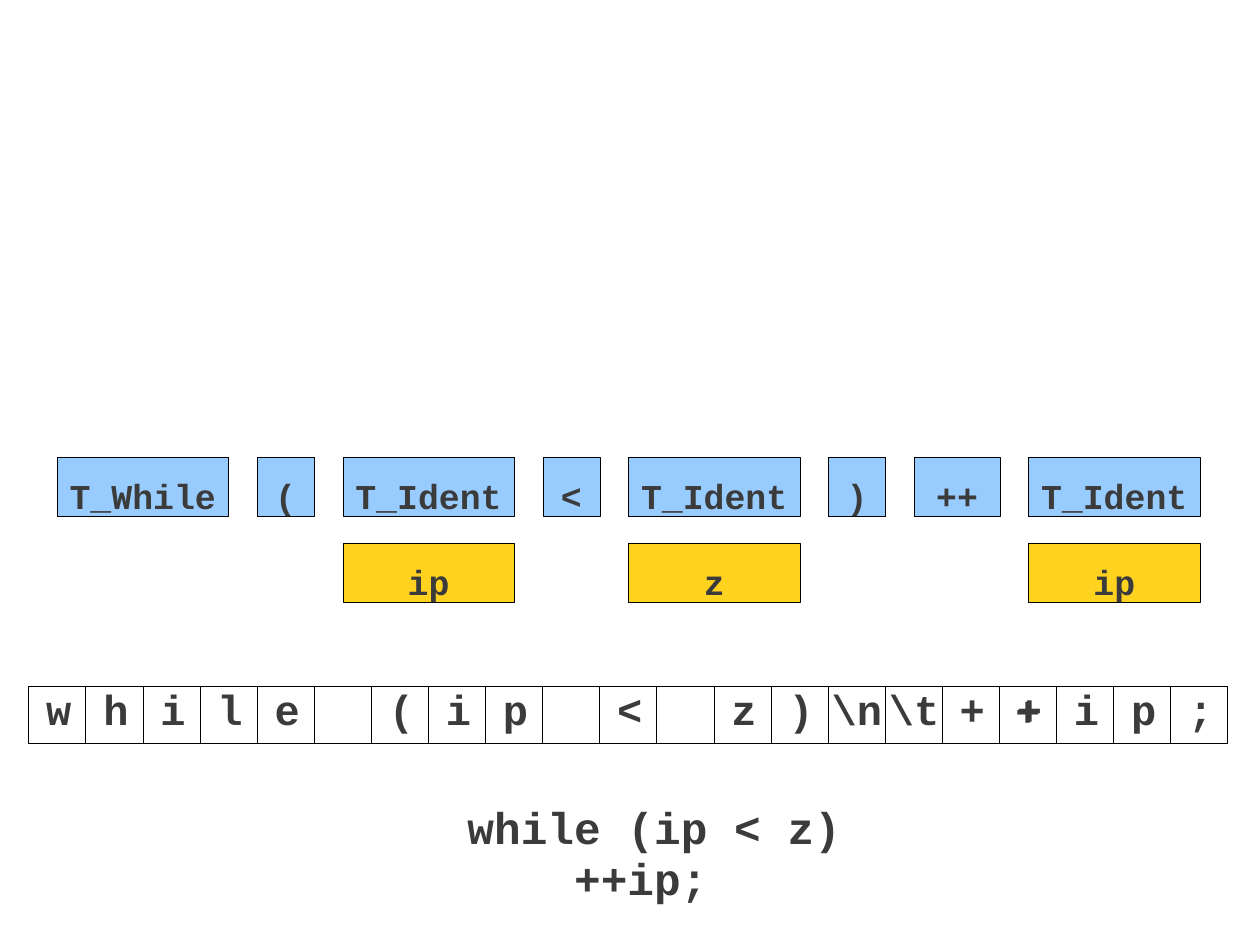
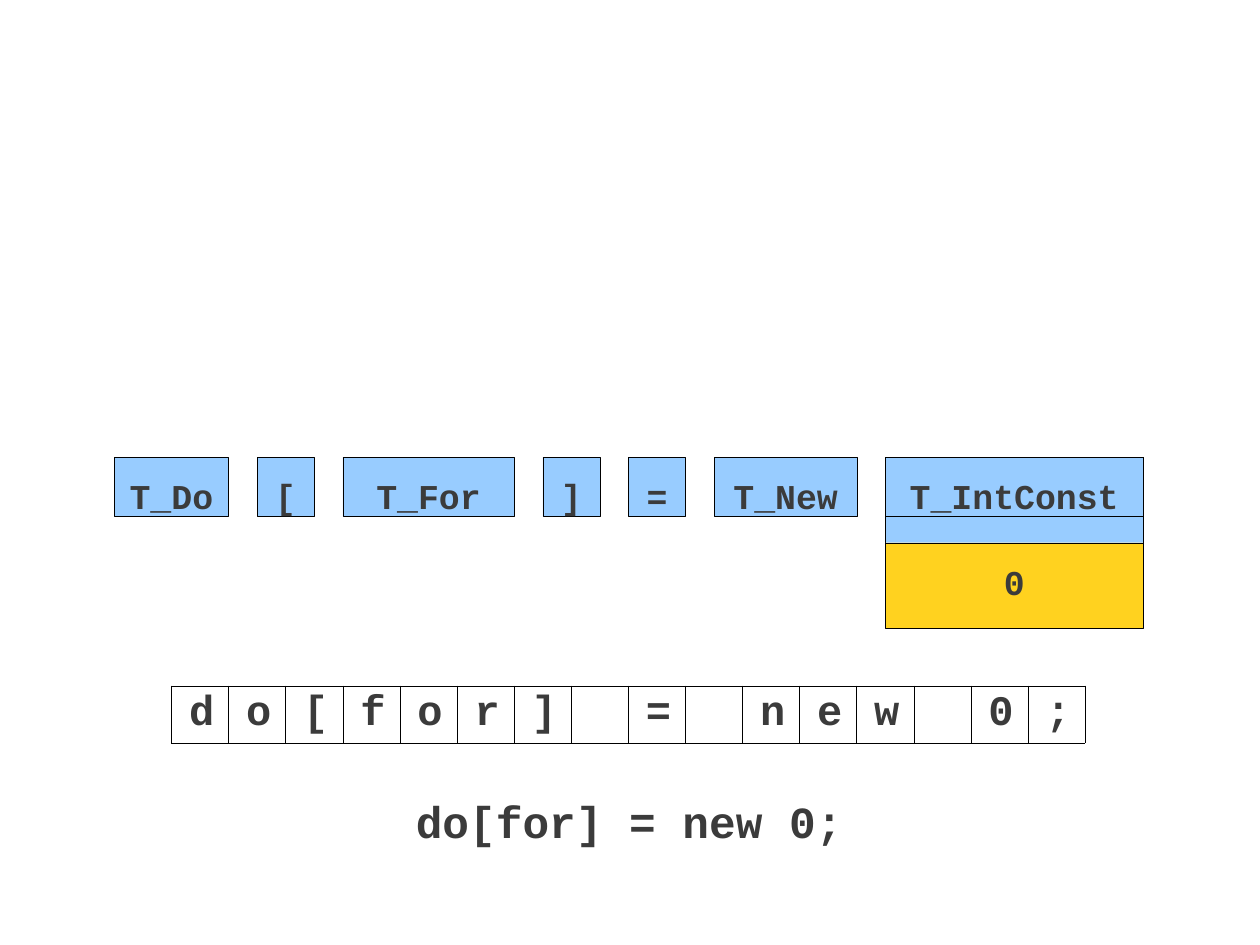
from lxml.etree import SubElement
from pptx import Presentation
from pptx.dml.color import RGBColor
from pptx.enum.shapes import MSO_SHAPE
from pptx.enum.text import MSO_ANCHOR, PP_ALIGN
from pptx.oxml.ns import qn
from pptx.util import Inches, Pt

INK, BLACK, BLUE, YELLOW = "3B3B3B", "000000", "98CCFF", "FFD21F"
LINE_W = Pt(0.25)

prs = Presentation()
prs.slide_width, prs.slide_height = Inches(10), Inches(7.5)

# Grid: a character cell is two units wide and two units high.
U = prs.slide_width / 44.1
TOKEN_ROW, VALUE_ROW, CHAR_ROW = 16, 19, 24
BOX_H = 2.08
CODE_SIZE = 25.4
CHAR_W = Pt(CODE_SIZE * 0.6)

SLIDES = [
    dict(
        tokens_col=2,
        tokens=[("T_While", 6, ""), ("(", 2, ""), ("T_Ident", 6, "ip"),
                ("<", 2, ""), ("T_Ident", 6, "z"), (")", 2, ""),
                ("++", 3, ""), ("T_Ident", 6, "ip")],
        value_h=BOX_H,
        chars_col=1,
        chars=[*"while (ip < z)", r"\n", r"\t", *"++ip;"],
        code_left=3.7,
        code=[("while (ip < z)", 0, 6.4), ("++ip;", 4, 6.8)],
    ),
    dict(
        tokens_col=4,
        tokens=[("T_Do", 4, ""), ("[", 2, ""), ("T_For", 6, ""), ("]", 2, ""),
                ("=", 2, ""), ("T_New", 5, ""), ("T_IntConst", 9, "0")],
        value_h=3,
        chars_col=6,
        chars=[*"do[for] = new 0;"],
        code_left=3.29,
        code=[("do[for] = new 0;", 0, 6.35)],
    ),
]


def write(tf, text, size, align=PP_ALIGN.LEFT, spacing=None, before=None,
          left=0, top=0):
    tf.margin_left, tf.margin_top = Inches(left), Inches(top)
    tf.margin_right = tf.margin_bottom = 0
    p = tf.paragraphs[0]
    p.alignment = align
    if spacing:
        p.line_spacing = Pt(spacing)
    if before:
        p.space_before = Pt(before)
    r = p.add_run()
    r.text = text
    r.font.name, r.font.size, r.font.bold = "Courier New", Pt(size), True
    r.font.color.rgb = RGBColor.from_string(INK)


def add_box(s, col, row, w, h, fill, text=""):
    sp = s.shapes.add_shape(MSO_SHAPE.RECTANGLE, *(round(n * U) for n in (col, row, w, h)))
    sp.shadow.inherit = False
    sp.fill.solid()
    sp.fill.fore_color.rgb = RGBColor.from_string(fill)
    sp.line.color.rgb = RGBColor.from_string(BLACK)
    sp.line.width = LINE_W
    if text:
        tf = sp.text_frame
        tf.word_wrap, tf.vertical_anchor = True, MSO_ANCHOR.TOP
        write(tf, text, 19.9, align=PP_ALIGN.CENTER, before=9.8, top=0.14)


for number, data in enumerate(SLIDES):
    s = prs.slides.add_slide(prs.slide_layouts[6])

    # The second plus sign of the first slide is doubled under the table.
    if number == 0:
        tb = s.shapes.add_textbox(Inches(8.06), Inches(5.49), Inches(0.2), Inches(0.35))
        tb.text_frame.word_wrap = True
        write(tb.text_frame, "+", 23.6, spacing=24.4)

    # Source characters, one per cell
    chars = data["chars"]
    cell_w = round(2 * U)
    frame = s.shapes.add_table(1, len(chars), round(data["chars_col"] * U),
                               round(CHAR_ROW * U), cell_w * len(chars), cell_w)
    table = frame.table
    table.first_row = table.horz_banding = False
    for i, char in enumerate(chars):
        table.columns[i].width = cell_w
        cell = table.cell(0, i)
        cell.margin_left = cell.margin_right = cell.margin_top = cell.margin_bottom = 0
        if char != " ":
            write(cell.text_frame, char, 24, spacing=30.2)
            cell.margin_left = Inches(0.14 if len(char) == 1 else 0.03)
        tc_pr = cell._tc.get_or_add_tcPr()
        for side in ("a:lnL", "a:lnR", "a:lnT", "a:lnB"):
            ln = SubElement(tc_pr, qn(side), w=str(LINE_W))
            SubElement(SubElement(ln, qn("a:solidFill")), qn("a:srgbClr"), val=BLACK)
        cell.fill.background()

    # Code words, set on a monospaced pitch
    for line, indent, top in data["code"]:
        pos = indent
        for word in line.split():
            tb = s.shapes.add_textbox(Inches(data["code_left"]) + pos * CHAR_W, Inches(top),
                                      len(word) * CHAR_W + Inches(0.03), Inches(0.39))
            tb.text_frame.word_wrap = True
            write(tb.text_frame, word, CODE_SIZE, spacing=27.1, left=0.01)
            pos += len(word) + 1

    # Tokens, one unit apart, with their values below
    col = data["tokens_col"]
    for token, w, value in data["tokens"]:
        if value and data["value_h"] > BOX_H:
            add_box(s, col, TOKEN_ROW, w, data["value_h"], BLUE)
        add_box(s, col, TOKEN_ROW, w, BOX_H, BLUE, token)
        if value:
            add_box(s, col, VALUE_ROW, w, data["value_h"], YELLOW, value)
        col += w + 1

prs.save("out.pptx")
